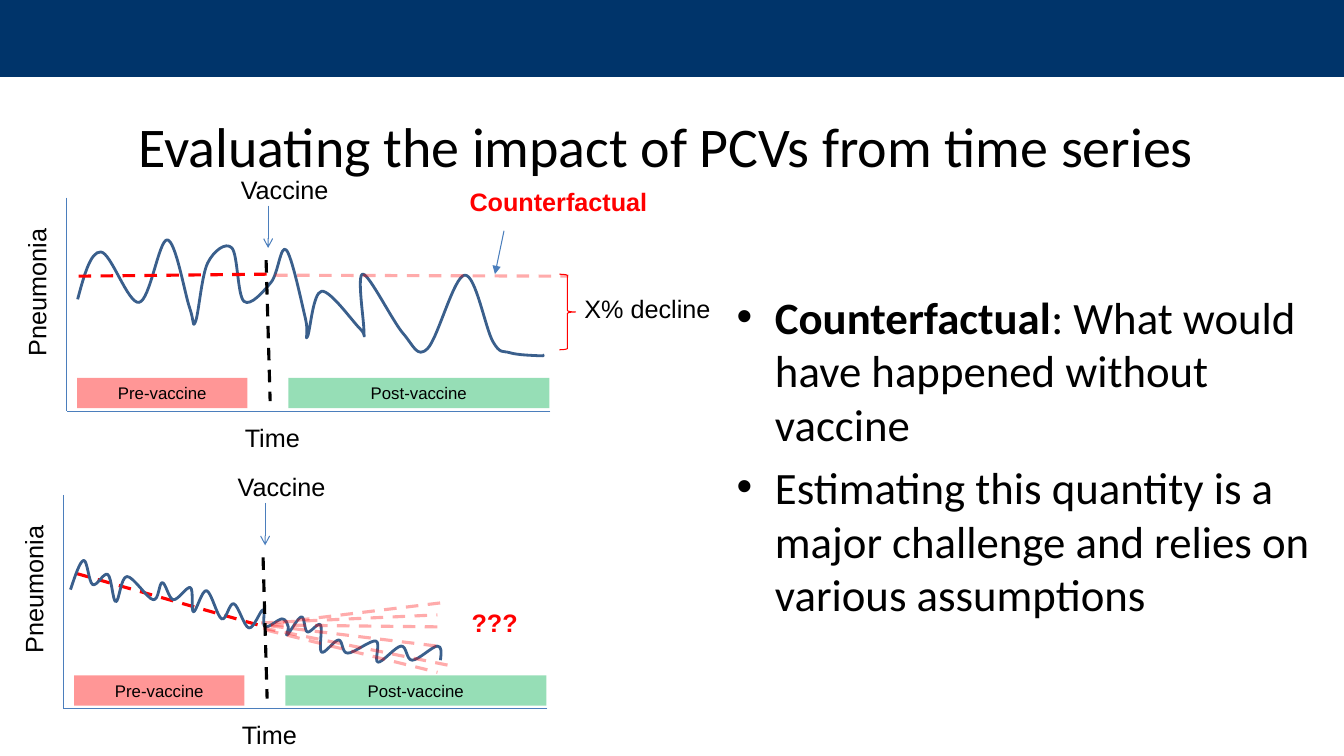
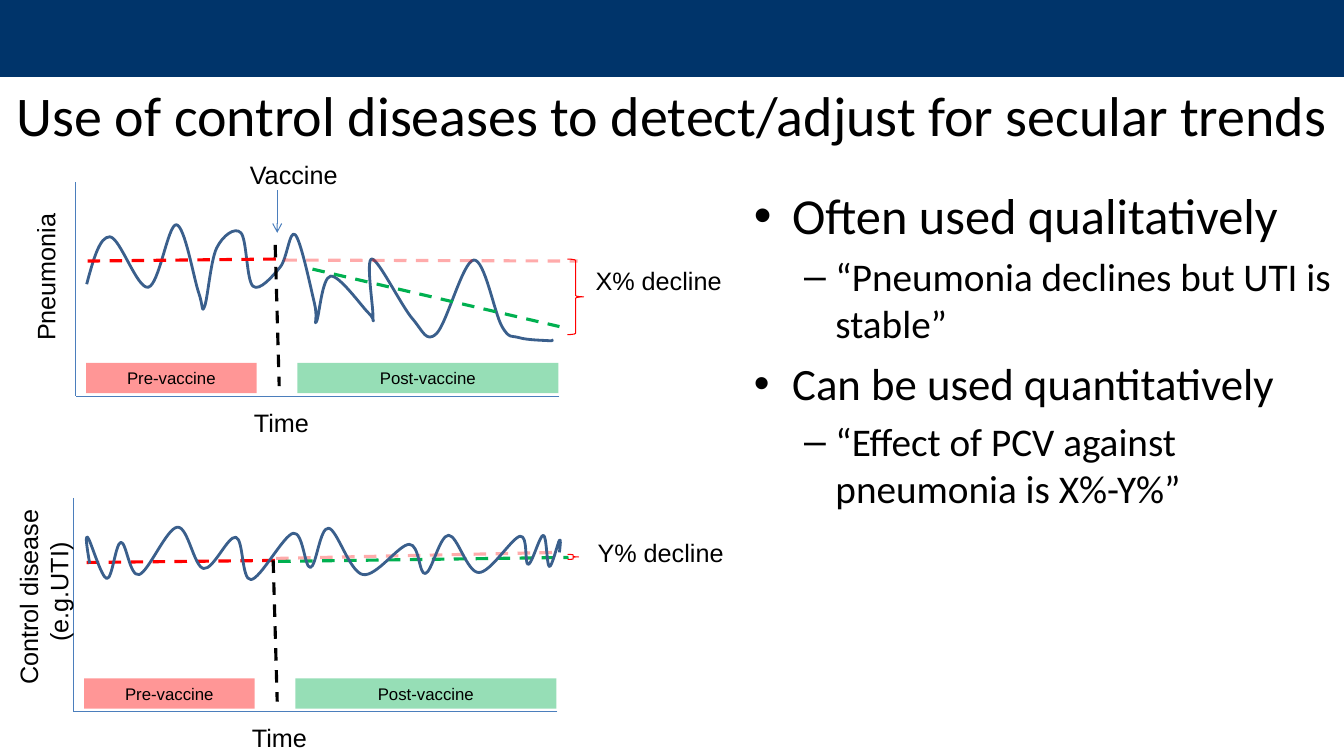
from dataclasses import dataclass
from typing import NamedTuple

from lxml import etree
from pptx import Presentation
from pptx.dml.color import RGBColor as Rgb
from pptx.enum.dml import MSO_LINE as Dashes
from pptx.enum.shapes import MSO_CONNECTOR as Link, MSO_SHAPE as Kind
from pptx.enum.text import MSO_ANCHOR as Anchor, MSO_AUTO_SIZE as Auto, PP_ALIGN as Align
from pptx.oxml.ns import qn
from pptx.util import Inches, Pt

HEX = {
    "navy": "00346A", "black": "000000", "axis": "4B7EBC",
    "wave": "3A5F8C", "red": "FF0000", "green": "00B050",
}
WIDE, HIGH = Inches(13.333), Inches(7.5)
ROWS, COLS = 750, 1333  # fine square grid over the slide
CELL = HIGH // ROWS
SANS, BODY = "Arial", "Calibri"


class Box(NamedTuple):
    left: float
    top: float
    wide: float
    high: float


class Spot(NamedTuple):
    x: float
    y: float


class Trend(NamedTuple):
    x1: float
    y1: float
    x2: float
    y2: float
    hue: str = "red"
    alpha: int = 100


class Item(NamedTuple):
    text: str
    size: int
    level: int = 0
    lead: str = ""


@dataclass
class Gap:
    """A brace and its label, measured from the panel's corner."""
    brace: Box
    text: str
    spot: Spot


@dataclass
class Panel:
    """A sketched time series; all parts are measured from its top left corner."""
    left: int
    top: int
    label: str
    tag: Box
    wave: list[tuple[float, float]]
    trends: list[Trend]
    under: int = 0  # how many trends lie beneath the wave
    gap: Gap | None = None
    vaccine: bool = True


# Basic parts
def tint(font, size: float, face: str, hue: str = "black", bold: bool = False) -> None:
    font.size, font.name, font.bold = Pt(size), face, bold
    font.color.rgb = Rgb.from_string(HEX[hue])


def fade(shape, alpha: int) -> None:
    for color in shape._element.spPr.iter(qn("a:srgbClr")):
        etree.SubElement(color, qn("a:alpha"), val=str(alpha * 1000))


def stroke(shape, hue: str, width: float) -> None:
    shape.line.color.rgb = Rgb.from_string(HEX[hue])
    shape.line.width = Pt(width)


def rule(slide, trend: Trend, width: float = 0.75, dash: bool = False, tip: str = "") -> None:
    ends = [round(n * CELL) for n in trend[:4]]
    line = slide.shapes.add_connector(Link.STRAIGHT, *ends)
    stroke(line, trend.hue, width)
    if dash:
        line.line.dash_style = Dashes.DASH
    if trend.alpha < 100:
        fade(line, trend.alpha)
    props = line._element.spPr
    if tip:
        etree.SubElement(props.find(qn("a:ln")), qn("a:tailEnd"), type=tip)
    etree.SubElement(props, qn("a:effectLst"))


def shape(slide, kind, box: Box, fill: str = "", line: str = "", width: float = 0.75):
    part = slide.shapes.add_shape(kind, *(round(n * CELL) for n in box))
    part.shadow.inherit = False
    if fill:
        part.fill.solid()
        part.fill.fore_color.rgb = Rgb.from_string(HEX[fill])
    else:
        part.fill.background()
    if line:
        stroke(part, line, width)
    else:
        part.line.fill.background()
    return part


def label(slide, text: str, box: Box, size: float = 18, face: str = SANS,
          hue: str = "black", bold: bool = False, wrap: bool = False, turn: int = 0):
    area = slide.shapes.add_textbox(*(round(n * CELL) for n in box))
    area.rotation = turn
    frame = area.text_frame
    frame.word_wrap, frame.auto_size = wrap, Auto.NONE if wrap else Auto.SHAPE_TO_FIT_TEXT
    frame.text = text
    for para in frame.paragraphs:
        for run in para.runs:
            tint(run.font, size, face, hue, bold)
    return frame


def curve(slide, knots: list[tuple[float, float]]) -> None:
    """Draw a smooth line whose tangent at each knot follows its neighbours."""
    last = len(knots) - 1
    slopes = [((c[0] - a[0]) / 6, (c[1] - a[1]) / 6) for a, c in zip(knots, knots[2:])]
    points = []
    for i in range(last):
        (ax, ay), (bx, by) = knots[i], knots[i + 1]
        out = (ax + slopes[i - 1][0], ay + slopes[i - 1][1]) if i else None
        into = (bx - slopes[i][0], by - slopes[i][1]) if i < last - 1 else None
        out = out or ((ax + into[0]) / 2, (ay + into[1]) / 2)
        into = into or ((bx + out[0]) / 2, (by + out[1]) / 2)
        points += [out, into, (bx, by)]
    start, *rest = [(round(x * CELL), round(y * CELL)) for x, y in [knots[0], *points]]
    pen = slide.shapes.build_freeform(*start, scale=1.0)
    pen.add_line_segments(rest, close=False)
    line = pen.convert_to_shape()
    line.shadow.inherit = False
    line.fill.background()
    stroke(line, "wave", 2)
    # Join every three points into one cubic piece
    trail = line._element.find(".//" + qn("a:path"))
    steps = trail.findall(qn("a:lnTo"))
    for i in range(0, len(steps), 3):
        piece = etree.SubElement(trail, qn("a:cubicBezTo"))
        for step in steps[i:i + 3]:
            piece.append(step[0])
            trail.remove(step)


# Larger parts
def draw(slide, panel: Panel) -> None:
    x, y = panel.left, panel.top

    def move(box: Box) -> Box:
        return box._replace(left=box.left + x, top=box.top + y)

    def span(t: Trend) -> Trend:
        return Trend(t.x1 + x, t.y1 + y, t.x2 + x, t.y2 + y, t.hue, t.alpha)

    # Axes and their names
    for axis in (Trend(0, 0, 0, 212, "axis"), Trend(480, 212, 0, 212, "axis")):
        rule(slide, span(axis))
    label(slide, "Time", move(Box(167, 218, 75, 40)))
    name = label(slide, panel.label, move(panel.tag), turn=270)
    for para in name.paragraphs[1:]:
        para.alignment = Align.CENTER
    if panel.vaccine:
        rule(slide, span(Trend(200, 8, 200, 50, "axis")), tip="arrow")
        label(slide, "Vaccine", move(Box(163, -28, 108, 40)))

    # Periods
    for text, left, wide, hue in (("Pre-vaccine", 10.5, 169, "red"),
                                  ("Post-vaccine", 220, 259, "green")):
        bar = shape(slide, Kind.RECTANGLE, move(Box(left, 179, wide, 30)), hue)
        fade(bar, 41)
        bar.text_frame.text = text
        para = bar.text_frame.paragraphs[0]
        para.alignment = Align.CENTER
        tint(para.runs[0].font, 12, SANS)

    # Series, trends and the vaccine date
    for trend in panel.trends[:panel.under]:
        rule(slide, span(trend), 2.25, dash=True)
    curve(slide, [(a + x, b + y) for a, b in panel.wave])
    for trend in [*panel.trends[panel.under:], Trend(198, 62, 202, 202, "black")]:
        rule(slide, span(trend), 2.25, dash=True)
    if panel.gap:
        shape(slide, Kind.RIGHT_BRACE, move(panel.gap.brace), line="red")
        label(slide, panel.gap.text, move(Box(*panel.gap.spot, 146, 40)))


def bullets(slide, box: Box, items: list[Item]) -> None:
    frame = label(slide, "", box, wrap=True)
    for i, item in enumerate(items):
        para = frame.add_paragraph() if i else frame.paragraphs[0]
        para.text = item.lead or item.text
        if item.lead:
            para.add_run().text = item.text
        para.level = item.level
        para.space_before = Pt(item.size * 0.2 if i else 0)
        props = para._p.get_or_add_pPr()
        margin, hang, mark = ((0.38, 0.38, "•"), (0.81, 0.31, "–"))[item.level]
        props.set("marL", str(Inches(margin)))
        props.set("indent", str(-Inches(hang)))
        etree.SubElement(props, qn("a:buFont"), typeface=SANS)
        etree.SubElement(props, qn("a:buChar"), char=mark)
        for n, run in enumerate(para.runs):
            tint(run.font, item.size, BODY, bold=bool(item.lead) and n == 0)


def page(deck, title: str, box: Box):
    slide = deck.slides.add_slide(deck.slide_layouts[6])
    shape(slide, Kind.RECTANGLE, Box(0, 0, WIDE / CELL, 75), "navy", "navy", 2)
    frame = label(slide, title, box, 40, BODY, wrap=True)
    frame.vertical_anchor = Anchor.MIDDLE
    frame.paragraphs[0].alignment = Align.CENTER
    return slide


# Series, in grid cells from the panel's corner
SWING = [(11, 101), (34, 54), (72, 104), (100, 42), (122, 109), (128, 123), (140, 65),
         (164, 50), (176, 103), (203, 84), (218, 52), (237, 120), (239, 138), (253, 93),
         (291, 130), (295, 133), (294, 76), (334, 135), (358, 150), (395, 77),
         (423, 143), (440, 154), (469, 157), (472, 156)]
SLIDE = [(7, 94), (20, 65), (29, 89), (44, 79), (52, 106), (63, 81), (89, 104), (98, 87),
         (109, 104), (126, 92), (129, 116), (142, 95), (157, 123), (169, 108), (184, 132),
         (198, 114), (200, 131), (217, 123), (223, 131), (222, 139), (236, 121),
         (242, 136), (255, 129), (256, 156), (273, 144), (282, 157), (310, 145),
         (312, 166), (335, 150), (346, 164), (371, 150), (374, 164)]
STEADY = [(16, 65), (14, 39), (33, 80), (47, 44), (65, 76), (103, 29), (129, 70), (161, 39),
          (176, 81), (218, 35), (235, 69), (253, 30), (287, 76), (333, 46), (349, 75),
          (372, 37), (402, 74), (443, 38), (451, 66), (466, 37), (472, 68), (482, 42),
          (482, 54)]
FAN = [(196, 127, 371, 119), (206, 129, 378, 131), (210, 127, 375, 107),
       (206, 130, 371, 150), (198, 132, 382, 169), (201, 134, 371, 176)]
TAG = Box(-104, 73, 148, 40)
LEVEL = [Trend(12, 78, 200, 76), Trend(207, 77, 498, 78, alpha=32)]


def main() -> None:
    deck = Presentation()
    deck.slide_width, deck.slide_height = WIDE, HIGH

    # Impact from time series
    first = page(deck, "Evaluating the impact of PCVs from time series",
                 Box(0, 81, 1321, 125))
    draw(first, Panel(66, 196, "Pneumonia", TAG, SWING, LEVEL,
                      gap=Gap(Box(489, 76, 16, 75), "X% decline", Spot(504, 90))))
    rule(first, Trend(500, 229, 491, 272, "axis"), tip="triangle")
    label(first, "Counterfactual", Box(456, 180, 198, 40), hue="red", bold=True)
    draw(first, Panel(63, 491, "Pneumonia", TAG, SLIDE,
                      [Trend(13, 78, 200, 131), *(Trend(*ray, alpha=32) for ray in FAN)],
                      under=2))
    label(first, "???", Box(458, 598, 66, 40), hue="red", bold=True)
    bullets(first, Box(721, 282, 589, 198), [
        Item(": What would have happened without vaccine", 32, lead="Counterfactual"),
        Item("Estimating this quantity is a major challenge and relies on "
             "various assumptions", 32),
    ])

    # Control diseases
    second = page(deck, "Use of control diseases to detect/adjust for secular trends",
                  Box(0, 51, COLS, 125))
    draw(second, Panel(75, 181, "Pneumonia", TAG, SWING,
                       [*LEVEL, Trend(235, 86, 480, 143, "green")],
                       gap=Gap(Box(488, 76, 16, 75), "X% decline", Spot(506, 77))))
    draw(second, Panel(73, 494, "Control disease\n(e.g.UTI)", Box(-131, 58, 203, 71), STEADY,
                       [Trend(13, 64, 200, 62), Trend(203, 63, 491, 59, "green"),
                        Trend(201, 60, 482, 54, alpha=32)],
                       under=3, vaccine=False,
                       gap=Gap(Box(490, 56, 11, 5), "Y% decline", Spot(510, 34))))
    bullets(second, Box(738, 178, COLS - 738, 453), [
        Item("Often used qualitatively", 36),
        Item("“Pneumonia declines but UTI is stable”", 28, 1),
        Item("Can be used quantitatively", 32),
        Item("“Effect of PCV against pneumonia is X%-Y%”", 28, 1),
    ])

    deck.save("out.pptx")


if __name__ == "__main__":
    main()
